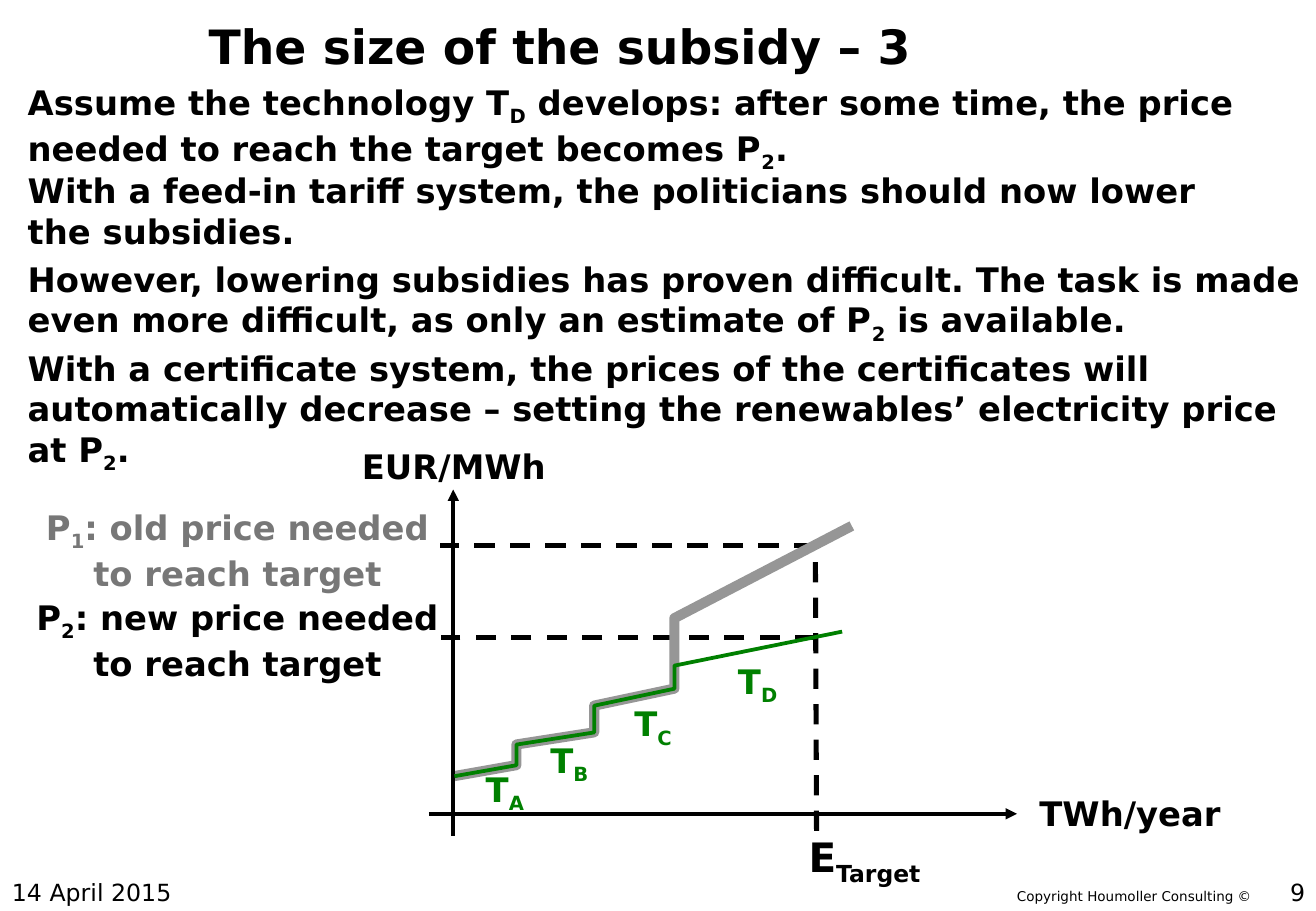
import pptx
import pptx.dml.color
import pptx.enum.dml
import pptx.enum.shapes
import pptx.enum.text
import pptx.oxml.ns
import pptx.util
from lxml import etree

BLACK = pptx.dml.color.RGBColor(0x00, 0x00, 0x00)
GREY = pptx.dml.color.RGBColor(0x96, 0x96, 0x96)
DARK_GREY = pptx.dml.color.RGBColor(0x77, 0x77, 0x77)
GREEN = pptx.dml.color.RGBColor(0x00, 0x80, 0x00)

ALIGN = pptx.enum.text.PP_ALIGN
ANCHOR = pptx.enum.text.MSO_ANCHOR
FIT = pptx.enum.text.MSO_AUTO_SIZE
DASH = pptx.enum.dml.MSO_LINE.DASH
TITLE_ONLY = 5
CELL_INCHES = 0.1

STATEMENTS = [
    ["Assume the technology T_D_ develops: after some time, the price",
     "needed to reach the target becomes P_2_."],
    ["With a feed-in tariff system, the politicians should now lower",
     "the subsidies."],
    ["However, lowering subsidies has proven difficult. The task is made",
     "even more difficult, as only an estimate of P_2_ is available."],
    ["With a certificate system, the prices of the certificates will",
     "automatically decrease – setting the renewables’ electricity price",
     "at P_2_."],
]
STATEMENT_WIDTHS = [102.4, 98.8, 107.7, 105.4]
STATEMENT_HEIGHTS = [7.7, 7.7, 7.7, 11.1]

PRICE_STEPS = [(37.4, 63.9), (42.5, 63), (42.5, 61.3), (48.9, 60.3),
               (48.9, 58.1), (55.5, 56.7)]
OLD_PRICE = PRICE_STEPS + [(55.5, 50.9), (70.1, 43.3)]
NEW_PRICE = PRICE_STEPS + [(55.5, 54.8), (69.3, 52)]
TECHNOLOGIES = {"D": (54.7, 53.9), "A": (33.9, 62.8),
                "B": (39.2, 60.4), "C": (46.1, 57.4)}


def cells(count):
    return pptx.util.Inches(count * CELL_INCHES)


def apply(target, values):
    for name, value in values.items():
        setattr(target, name, value)


def place(shape, left, top, width, height):
    apply(shape, {"left": cells(left), "top": cells(top),
                  "width": cells(width), "height": cells(height)})


def write(frame, lines, size, color=BLACK, bold=True, align=ALIGN.LEFT):
    for index, line in enumerate(lines):
        paragraph = frame.paragraphs[0] if index == 0 else frame.add_paragraph()
        paragraph.alignment = align
        for part, words in enumerate(line.split("_")):
            run = paragraph.add_run()
            run.text = words
            apply(run.font, {"name": "DejaVu Sans", "size": pptx.util.Pt(size), "bold": bold})
            run.font.color.rgb = color
            if part % 2:
                run._r.get_or_add_rPr().set("baseline", "-25000")


def add_text(slide, lines, box, size=20, wrap=True, fit=FIT.SHAPE_TO_FIT_TEXT,
             anchor=ANCHOR.TOP, **text_format):
    frame = slide.shapes.add_textbox(*map(cells, box)).text_frame
    apply(frame, {"word_wrap": wrap, "auto_size": fit, "vertical_anchor": anchor})
    write(frame, lines, size, **text_format)


def add_line(slide, start, end, width, dash=None, arrow=False):
    line = slide.shapes.add_connector(
        pptx.enum.shapes.MSO_CONNECTOR.STRAIGHT, *map(cells, start + end))
    apply(line.line, {"width": pptx.util.Pt(width), "dash_style": dash})
    line.line.color.rgb = BLACK
    if arrow:
        etree.SubElement(line.line._get_or_add_ln(), pptx.oxml.ns.qn("a:tailEnd"), type="triangle")
    etree.SubElement(line._element.spPr, pptx.oxml.ns.qn("a:effectLst"))


def add_curve(slide, points, color, width):
    start, *rest = [(cells(x), cells(y)) for x, y in points]
    builder = slide.shapes.build_freeform(*start)
    builder.add_line_segments(rest, close=False)
    curve = builder.convert_to_shape()
    curve.shadow.inherit = False
    curve.fill.background()
    curve.line.color.rgb = color
    curve.line.width = pptx.util.Pt(width)


def add_title(slide):
    title = slide.shapes.title
    place(title, 0, 0, 92.1, 7.5)
    apply(title.text_frame, {"vertical_anchor": ANCHOR.MIDDLE, "auto_size": FIT.NONE})
    write(title.text_frame, ["The size of the subsidy – 3"], 28, align=ALIGN.CENTER)


def add_statements(slide):
    for row, lines in enumerate(STATEMENTS):
        box = (1.3, 6.2 + 7.3 * row, STATEMENT_WIDTHS[row], STATEMENT_HEIGHTS[row])
        add_text(slide, lines, box, wrap=False)


def add_price_diagram(slide):
    add_line(slide, (67.1, 52.5), (36.3, 52.5), 3, dash=DASH)
    add_line(slide, (67.2, 68.4), (67.1, 45), 3, dash=DASH)
    add_line(slide, (67, 44.9), (36.2, 44.9), 3, dash=DASH)
    add_curve(slide, OLD_PRICE, GREY, 6)
    add_line(slide, (37.3, 68.8), (37.3, 40.3), 2.25, arrow=True)
    add_line(slide, (35.3, 67), (83.7, 67), 2.25, arrow=True)

    centred = {"align": ALIGN.CENTER}
    add_text(slide, ["TWh/year"], (80.6, 64.8, 24.8, 4.4), **centred)
    add_text(slide, ["EUR/MWh"], (27.8, 36.2, 19.1, 4.4), **centred)
    add_text(slide, ["E_Target_"], (63.5, 68, 15.3, 5), size=24, **centred)
    add_text(slide, ["P_1_: old price needed", "to reach target"],
             (1.7, 41.2, 35.7, 7.7), color=DARK_GREY, **centred)
    add_text(slide, ["P_2_: new price needed", "to reach target"],
             (1.7, 48.6, 35.7, 7.7), **centred)
    for technology, corner in TECHNOLOGIES.items():
        add_text(slide, [f"T_{technology}_"], corner + (15.3, 4.4), color=GREEN, **centred)
    add_curve(slide, NEW_PRICE, GREEN, 2.25)


def add_footer(slide):
    add_text(slide, ["Copyright Houmoller Consulting ©"], (82.7, 72.6, 21.6, 2.4),
             size=8, wrap=False, bold=False)
    edge = {"size": 14, "wrap": False, "fit": FIT.NONE,
            "anchor": ANCHOR.MIDDLE, "bold": False}
    add_text(slide, ["14 April 2015"], (0, 70.9, 22.6, 5), **edge)
    add_text(slide, ["9"], (85.8, 70.9, 22.6, 5), align=ALIGN.RIGHT, **edge)


def main():
    deck = pptx.Presentation()
    apply(deck, {"slide_width": cells(108.3), "slide_height": cells(75)})
    slide = deck.slides.add_slide(deck.slide_layouts[TITLE_ONLY])
    add_title(slide)
    add_statements(slide)
    add_price_diagram(slide)
    add_footer(slide)
    deck.save("out.pptx")


if __name__ == "__main__":
    main()
